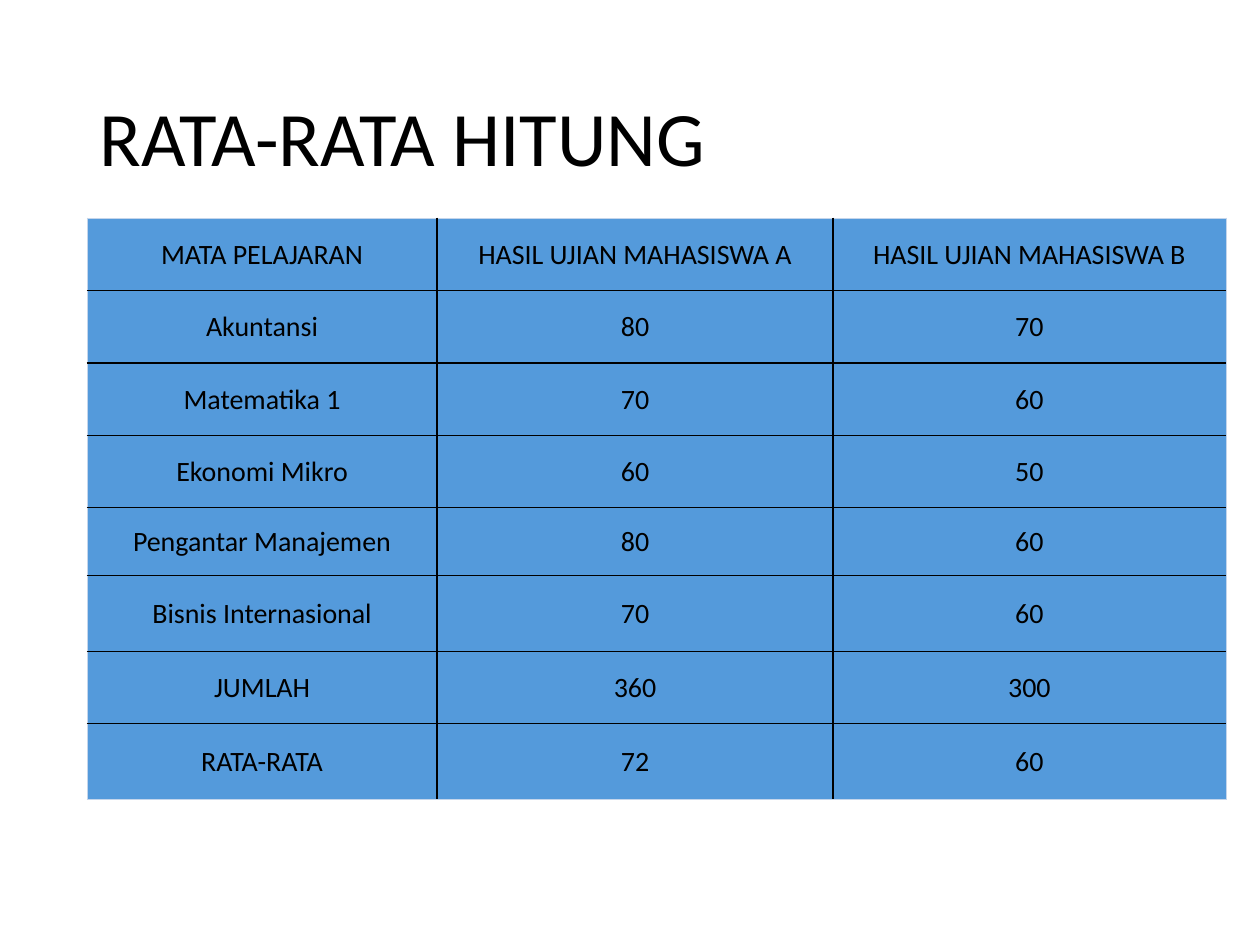
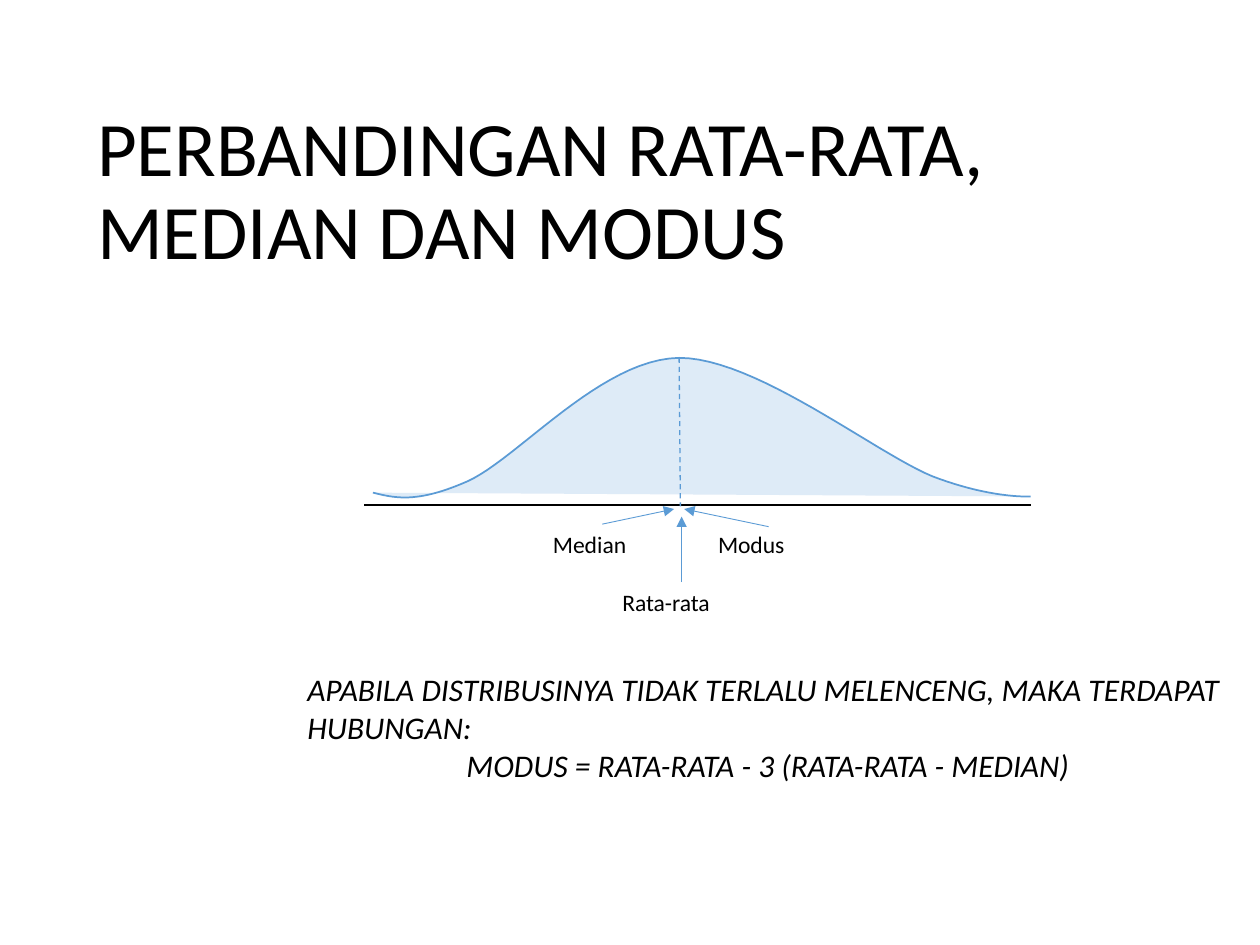
from dataclasses import dataclass

from lxml.etree import SubElement
from pptx import Presentation
from pptx.dml.color import RGBColor
from pptx.enum.dml import MSO_LINE
from pptx.enum.shapes import MSO_CONNECTOR
from pptx.enum.text import MSO_ANCHOR, MSO_AUTO_SIZE, PP_ALIGN
from pptx.oxml.ns import qn
from pptx.util import Inches, Pt


@dataclass(frozen=True)
class Theme:
    font: str = "Calibri"
    ink: str = "000000"
    accent: str = "5B9BD5"
    curve_fill: str = "DEEBF7"
    cell_fill: str = "549ADB"
    table_edge: str = "C4D5EB"
    title_size: float = 44
    table_size: float = 16
    label_size: float = 13.5
    note_size: float = 18


THEME = Theme()
COLUMNS, ROWS = 100, 75  # square grid units that cover the slide
TITLE_ONLY = 5

SCORES = [
    ("MATA PELAJARAN", "HASIL UJIAN MAHASISWA A", "HASIL UJIAN MAHASISWA B"),
    ("Akuntansi", "80", "70"),
    ("Matematika 1", "70", "60"),
    ("Ekonomi Mikro", "60", "50"),
    ("Pengantar Manajemen", "80", "60"),
    ("Bisnis Internasional", "70", "60"),
    ("JUMLAH", "360", "300"),
    ("RATA-RATA", "72", "60"),
]
SCORE_COLUMNS = (27.8, 31.4, 31.2)
SCORE_ROWS = (5.75, 5.75, 5.75, 5.75, 5.4, 6, 5.75, 6)

# Bezier segments of the distribution: start, two handles, end
CURVE = [
    ((29.6, 39.1), (31.3, 39.5), (33, 40), (37.1, 38.2)),
    ((37.1, 38.2), (41.1, 36.4), (47.7, 28.5), (53.9, 28.4)),
    ((53.9, 28.4), (60, 28.4), (69.4, 35.9), (74, 37.8)),
    ((74, 37.8), (78.7, 39.6), (81.8, 39.4), (81.8, 39.4)),
]


def grid(*units):
    return [Inches(unit * 10 / COLUMNS) for unit in units]


def rgb(value):
    return RGBColor.from_string(value)


# Text
def write(para, text, size, italic=False, align=PP_ALIGN.LEFT):
    para.alignment = align
    span = para.add_run()
    span.text = text
    span.font.name = THEME.font
    span.font.size = Pt(size)
    span.font.bold = False
    span.font.italic = italic
    span.font.color.rgb = rgb(THEME.ink)


def add_titled_page(deck, text, place):
    page = deck.slides.add_slide(deck.slide_layouts[TITLE_ONLY])
    title = page.shapes.title
    title.left, title.top, title.width, title.height = grid(*place)
    frame = title.text_frame
    frame.auto_size = MSO_AUTO_SIZE.NONE
    frame.vertical_anchor = MSO_ANCHOR.MIDDLE
    frame.paragraphs[0].line_spacing = 0.9
    write(frame.paragraphs[0], text, THEME.title_size)
    return page


def add_text(page, place, lines, size, italic=False):
    box = page.shapes.add_textbox(*grid(*place))
    frame = box.text_frame
    frame.word_wrap = True
    frame.auto_size = MSO_AUTO_SIZE.SHAPE_TO_FIT_TEXT
    for index, (text, align) in enumerate(lines):
        para = frame.add_paragraph() if index else frame.paragraphs[0]
        write(para, text, size, italic, align)


# Table
def add_border(cell, side, color, width):
    line = SubElement(cell._tc.get_or_add_tcPr(), qn(f"a:ln{side}"), w=str(Pt(width)))
    fill = SubElement(line, qn("a:solidFill"))
    SubElement(fill, qn("a:srgbClr"), val=color)


def style_cell(cell, outer_sides):
    cell.margin_left = cell.margin_right = cell.margin_top = Inches(0.01)
    cell.margin_bottom = 0
    cell.vertical_anchor = MSO_ANCHOR.MIDDLE
    for side in "LRTB":
        outer = side in outer_sides
        add_border(cell, side, THEME.table_edge if outer else THEME.ink, 0.5 if outer else 1)
    cell.fill.solid()
    cell.fill.fore_color.rgb = rgb(THEME.cell_fill)


def add_score_table(page, left, top):
    place = grid(left, top, sum(SCORE_COLUMNS), sum(SCORE_ROWS))
    table = page.shapes.add_table(len(SCORES), len(SCORE_COLUMNS), *place).table
    table.first_row = table.horz_banding = False
    for column, width in zip(table.columns, grid(*SCORE_COLUMNS)):
        column.width = width
    for row, height in zip(table.rows, grid(*SCORE_ROWS)):
        row.height = height

    last_row, last_column = len(SCORES) - 1, len(SCORE_COLUMNS) - 1
    for r, values in enumerate(SCORES):
        for c, value in enumerate(values):
            edges = {"L": c == 0, "R": c == last_column, "T": r == 0, "B": r == last_row}
            cell = table.cell(r, c)
            style_cell(cell, [side for side, outer in edges.items() if outer])
            write(cell.text_frame.paragraphs[0], value, THEME.table_size, align=PP_ALIGN.CENTER)


# Distribution drawing
def bezier_points(segment, steps=24):
    for step in range(1, steps + 1):
        t = step / steps
        weights = ((1 - t) ** 3, 3 * t * (1 - t) ** 2, 3 * t ** 2 * (1 - t), t ** 3)
        yield tuple(
            sum(weight * point[axis] for weight, point in zip(weights, segment))
            for axis in (0, 1)
        )


def add_curve(page):
    points = [point for segment in CURVE for point in bezier_points(segment)]
    builder = page.shapes.build_freeform(*grid(*CURVE[0][0]))
    builder.add_line_segments([grid(*point) for point in points], close=False)
    curve = builder.convert_to_shape()
    curve.shadow.inherit = False
    curve.fill.solid()
    curve.fill.fore_color.rgb = rgb(THEME.curve_fill)
    curve.line.color.rgb = rgb(THEME.accent)
    curve.line.width = Pt(1)


def add_line(page, start, end, color, width, dash=None, arrow=False):
    line = page.shapes.add_connector(MSO_CONNECTOR.STRAIGHT, *grid(*start, *end))
    line.line.color.rgb = rgb(color)
    line.line.width = Pt(width)
    if dash:
        line.line.dash_style = dash
    properties = line._element.spPr
    if arrow:
        SubElement(properties.find(qn("a:ln")), qn("a:tailEnd"), type="triangle")
    SubElement(properties, qn("a:effectLst"))


def add_distribution(page):
    add_curve(page)
    add_line(page, (28.9, 40.1), (81.8, 40.1), THEME.ink, 1)
    add_line(page, (53.9, 28.4), (54, 40.2), THEME.accent, 0.75, MSO_LINE.DASH)

    # Each measure: label, its place, arrow start and arrow end
    measures = [
        ("Median", (42.9, 41.6, 9.9, 3.3), (47.8, 41.6), (53.5, 40.4)),
        ("Modus", (56, 41.6, 9.9, 3.3), (61, 41.8), (54.3, 40.4)),
        ("Rata-rata", (48.4, 46.2, 11.5, 3.3), (54.1, 46.2), (54.1, 41)),
    ]
    for label, place, start, end in measures:
        add_text(page, place, [(label, PP_ALIGN.LEFT)], THEME.label_size)
        add_line(page, start, end, THEME.accent, 0.5, arrow=True)


def main():
    deck = Presentation()
    deck.slide_width, deck.slide_height = grid(COLUMNS, ROWS)

    # Exam scores
    page = add_titled_page(deck, "RATA-RATA HITUNG", (6.9, 4, 86.2, 14.5))
    add_score_table(page, 6.9, 17.3)

    # Mean, median and mode
    page = add_titled_page(
        deck, "PERBANDINGAN RATA-RATA, MEDIAN DAN MODUS", (6.7, 8.1, 93.3, 14.5)
    )
    add_distribution(page)
    relation = [
        ("APABILA DISTRIBUSINYA TIDAK TERLALU MELENCENG, MAKA TERDAPAT HUBUNGAN:", PP_ALIGN.LEFT),
        ("MODUS = RATA-RATA - 3 (RATA-RATA - MEDIAN)", PP_ALIGN.CENTER),
    ]
    add_text(page, (23.4, 52.7, 75.1, 10.1), relation, THEME.note_size, italic=True)

    deck.save("out.pptx")


if __name__ == "__main__":
    main()
